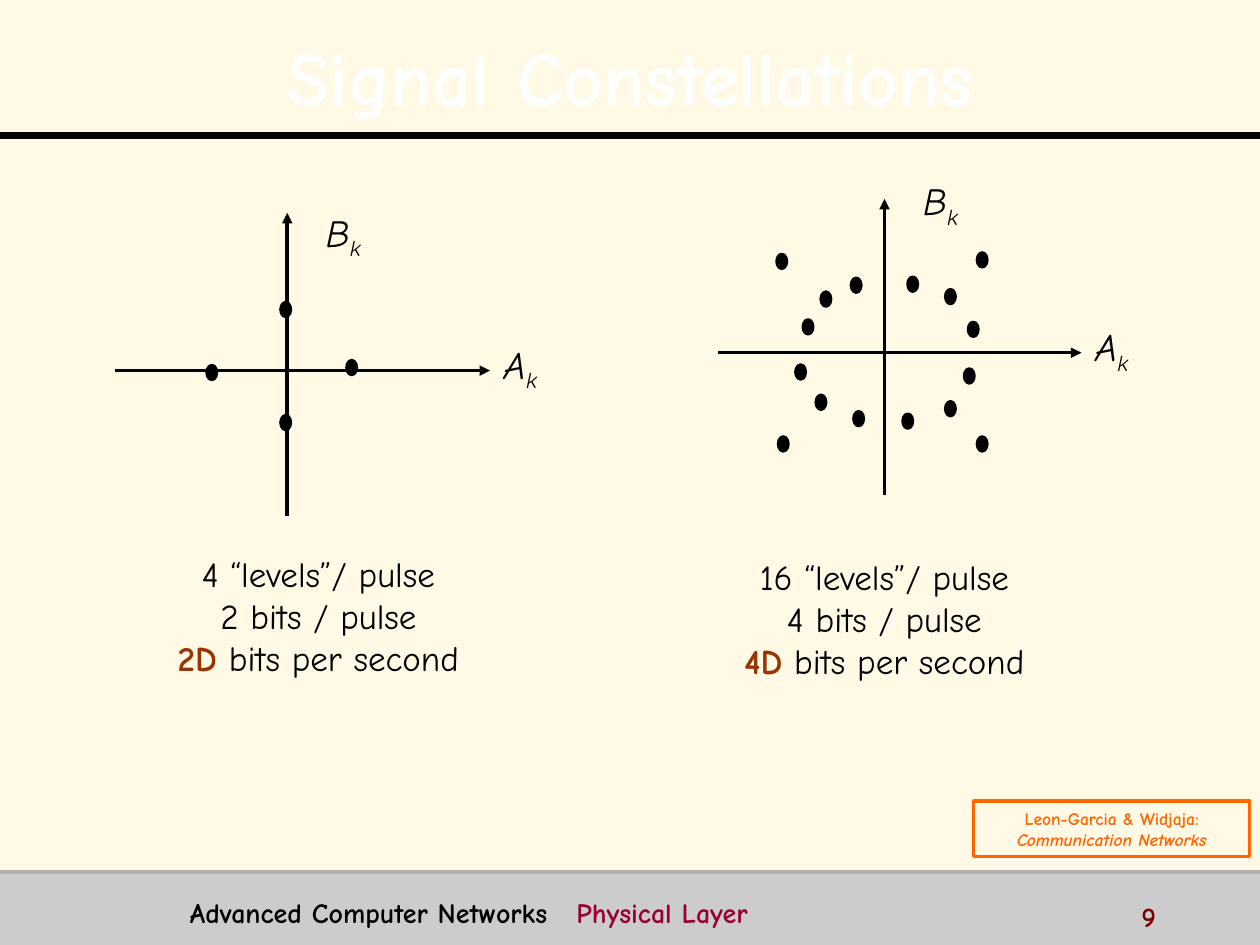
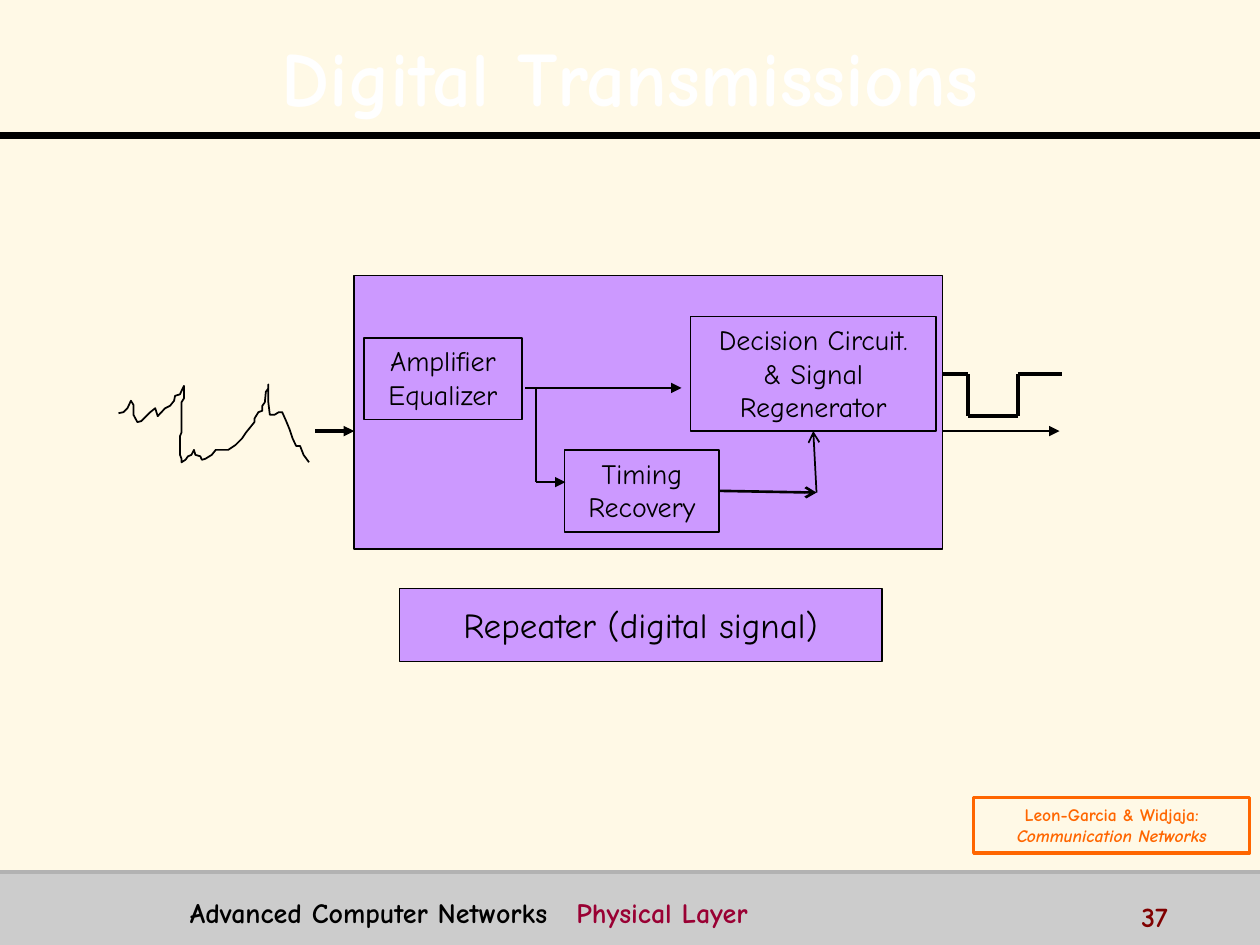
from dataclasses import dataclass
from itertools import pairwise

from lxml.etree import SubElement
from pptx import Presentation
from pptx.dml.color import RGBColor
from pptx.enum.shapes import MSO_CONNECTOR, MSO_SHAPE
from pptx.enum.text import MSO_ANCHOR, MSO_AUTO_SIZE, PP_ALIGN
from pptx.oxml import parse_xml
from pptx.oxml.ns import nsdecls, qn
from pptx.util import Cm, Pt


@dataclass(frozen=True)
class Theme:
    """Colours, font and type sizes shared by the slides."""
    font: str = "Comic Neue"
    paper: str = "FFF9E6"
    ink: str = "000000"
    white: str = "FFFFFF"
    band: str = "CCCCCC"
    band_edge: str = "B2B2B2"
    chapter: str = "990033"
    number: str = "800000"
    accent: str = "993300"
    citation: str = "FF6600"
    block: str = "CC99FF"
    title_size: int = 44
    axis_size: int = 22
    body_size: int = 20
    label_size: int = 16
    citation_size: int = 10


THEME = Theme()
WIDTH, HEIGHT = 25.4, 19.05
BAND_TOP = 17.58
DOT_WIDTH, DOT_HEIGHT = 0.19, 0.28

FOUR_LEVELS = [(-0.03, -1.23), (1.3, -0.06), (-1.52, 0.04), (-0.03, 1.05)]
SIXTEEN_LEVELS = [
    (-2.07, -1.84), (-0.57, -1.36), (-1.54, -0.52), (-1.18, -1.08),
    (0.57, -1.38), (1.97, -1.87), (1.33, -1.13), (1.79, -0.47),
    (-1.69, 0.39), (-1.28, 1), (-2.04, 1.84), (-0.52, 1.33),
    (1.33, 1.13), (1.71, 0.47), (0.47, 1.38), (1.97, 1.84),
]
NOISY_SIGNAL = [
    (0, 58), (10, 56), (18, 48), (25, 33), (30, 41), (30, 61), (38, 76), (46, 74),
    (64, 56), (74, 48), (79, 64), (94, 48), (104, 43), (112, 33), (114, 23), (124, 20),
    (127, 13), (132, 3), (132, 28), (127, 36), (127, 97), (124, 104), (124, 142),
    (127, 150), (127, 157), (135, 152), (140, 145), (147, 142), (152, 132), (155, 142),
    (165, 145), (168, 152), (175, 150), (188, 142), (196, 132), (221, 132), (236, 122),
    (249, 109), (257, 97), (274, 76), (274, 69), (282, 56), (290, 53), (290, 43),
    (295, 36), (297, 15), (302, 8), (302, 0), (302, 36), (305, 61), (315, 61),
    (323, 56), (330, 56), (338, 74), (345, 91), (351, 109), (358, 124), (366, 124),
    (373, 142), (384, 157),
]


def add_span(para, text, size, color=THEME.ink, bold=False, italic=False,
             subscript=False, shadow=False):
    """Append one formatted run to a paragraph."""
    span = para.add_run()
    span.text = text
    font = span.font
    font.name, font.size, font.bold, font.italic = THEME.font, Pt(size), bold, italic
    font.color.rgb = RGBColor.from_string(color)
    properties = span._r.get_or_add_rPr()
    if subscript:
        properties.set("baseline", "-25000")
    if shadow:
        properties.find(qn("a:solidFill")).addnext(parse_xml(
            f'<a:effectLst {nsdecls("a")}><a:outerShdw dist="35921" dir="2700000">'
            f'<a:srgbClr val="{THEME.ink}"/></a:outerShdw></a:effectLst>'))


def write(box, lines, align=PP_ALIGN.CENTER, anchor=MSO_ANCHOR.TOP, wrap=True,
          inset=None, spacing=None, tab=None, **style):
    """Fill a shape with lines, each a list of (text, style changes) spans."""
    frame = box.text_frame
    frame.word_wrap = wrap
    frame.vertical_anchor = anchor
    if inset:
        frame.margin_left = frame.margin_right = Cm(inset[0])
        frame.margin_top = frame.margin_bottom = Cm(inset[1])
    for index, spans in enumerate(lines):
        para = frame.add_paragraph() if index else frame.paragraphs[0]
        para.alignment = align
        if spacing:
            para.line_spacing = spacing
        if tab:
            stops = SubElement(para._p.get_or_add_pPr(), qn("a:tabLst"))
            SubElement(stops, qn("a:tab"), pos=str(Cm(tab)), algn="l")
        for text, changes in spans:
            add_span(para, text, **{**style, **changes})


def add_text(page, left, top, width, height, lines, grow=False, **style):
    """Add a text box, optionally fitted to its text."""
    box = page.shapes.add_textbox(Cm(left), Cm(top), Cm(width), Cm(height))
    write(box, lines, **style)
    if grow:
        box.text_frame.auto_size = MSO_AUTO_SIZE.SHAPE_TO_FIT_TEXT
    return box


def paint(shape, fill=None, line=None, weight=1):
    """Set fill and outline of a shape and remove its shadow."""
    shape.shadow.inherit = False
    if fill:
        shape.fill.solid()
        shape.fill.fore_color.rgb = RGBColor.from_string(fill)
    else:
        shape.fill.background()
    if line:
        shape.line.color.rgb = RGBColor.from_string(line)
        shape.line.width = Pt(weight)
    else:
        shape.line.fill.background()


def add_box(page, left, top, width, height, kind=MSO_SHAPE.RECTANGLE, **look):
    """Add a painted preset shape."""
    shape = page.shapes.add_shape(kind, Cm(left), Cm(top), Cm(width), Cm(height))
    paint(shape, **look)
    return shape


def add_line(page, start, end, weight=1, color=THEME.ink, head=None):
    """Add a straight connector, with an arrowhead at its end if asked."""
    line = page.shapes.add_connector(
        MSO_CONNECTOR.STRAIGHT, *(Cm(value) for value in (*start, *end)))
    line.line.color.rgb = RGBColor.from_string(color)
    line.line.width = Pt(weight)
    if head:
        SubElement(line.line._get_or_add_ln(), qn("a:tailEnd"), type=head)
    SubElement(line._element.spPr, qn("a:effectLst"))
    return line


def add_page(deck, title, number):
    """Add a slide with background, title, rule and footer band."""
    page = deck.slides.add_slide(deck.slide_layouts[6])
    page.background.fill.solid()
    page.background.fill.fore_color.rgb = RGBColor.from_string(THEME.paper)
    add_box(page, 0, BAND_TOP, WIDTH, HEIGHT - BAND_TOP, fill=THEME.band)
    add_line(page, (0, 2.74), (WIDTH, 2.74), weight=4)
    add_line(page, (0, BAND_TOP), (WIDTH, BAND_TOP), weight=2, color=THEME.band_edge)
    add_text(page, 0.51, 0.33, 24.4, 2.21, [[(title, {})]], anchor=MSO_ANCHOR.MIDDLE,
             spacing=1.1, size=THEME.title_size, color=THEME.white, bold=True, shadow=True)
    footer = [("Advanced Computer Networks\t", {}),
              ("Physical Layer", {"color": THEME.chapter})]
    add_text(page, 3.58, 17.93, 18.49, 0.79, [footer], align=PP_ALIGN.LEFT, tab=7.79,
             size=THEME.label_size, bold=True)
    add_text(page, 22.76, 18.01, 2.54, 0.64, [[(number, {})]], align=PP_ALIGN.LEFT,
             size=THEME.label_size, color=THEME.number, bold=True)
    return page


def add_citation(page, top):
    """Add the framed book reference above the footer."""
    box = add_box(page, 19.63, top, 5.56, 1.12, line=THEME.citation, weight=2)
    write(box, [[("Leon-Garcia & Widjaja:", {})],
                [("Communication Networks", {"italic": True})]],
          anchor=MSO_ANCHOR.MIDDLE, size=THEME.citation_size,
          color=THEME.citation, bold=True)


def add_axis_label(page, left, top, letter):
    """Add an axis name with subscript k."""
    add_text(page, left, top, 1.5, 1.32, [[(letter, {}), ("k", {"subscript": True})]],
             grow=True, wrap=False, inset=(0.38, 0.2), size=THEME.axis_size, italic=True)


def add_constellation(page, left, top, width, height, origin, dots, lift,
                      caption_at, levels, bits):
    """Draw axes, signal points and caption relative to the plot's box."""
    center, middle = left + origin[0], top + origin[1]
    add_line(page, (center, top + height), (center, top), weight=2, head="triangle")
    add_line(page, (left, middle), (left + width, middle), weight=2, head="triangle")
    for across, down in dots:
        add_box(page, center + across - DOT_WIDTH / 2, middle + down - DOT_HEIGHT / 2,
                DOT_WIDTH, DOT_HEIGHT, kind=MSO_SHAPE.OVAL,
                fill=THEME.ink, line=THEME.ink, weight=2)
    add_axis_label(page, left + width - 0.14, middle - 0.8, "A")
    add_axis_label(page, center + 0.38, top - lift, "B")
    caption = [[(f"{levels} “levels”/ pulse", {})],
               [(f"{bits} bits / pulse", {})],
               [(f"{bits}D", {"color": THEME.accent, "bold": True}),
                (" bits per second", {})]]
    add_text(page, left + caption_at[0], top + caption_at[1], 6.9, 2.82, caption,
             grow=True, wrap=False, size=THEME.body_size)


def add_noisy_signal(page, left, top):
    """Draw the distorted incoming waveform."""
    builder = page.shapes.build_freeform(*NOISY_SIGNAL[0], scale=Cm(0.01))
    builder.add_line_segments(NOISY_SIGNAL[1:], close=False)
    paint(builder.convert_to_shape(Cm(left), Cm(top)), line=THEME.ink)


def add_repeater(page, left, top, width, height):
    """Draw the repeater block, its stages, signals and caption."""
    def at(across, down):
        """Give the slide position of a point in the block."""
        return left + across, top + down

    def add_stage(across, down, stage_width, stage_height, *names):
        """Add one outlined stage with a name on each line."""
        stage = add_box(page, *at(across, down), stage_width, stage_height, line=THEME.ink)
        write(stage, [[(name, {})] for name in names], size=THEME.label_size)
        return stage

    add_line(page, at(-0.79, 3.13), at(0, 3.13), weight=2, head="triangle")
    add_line(page, at(11.5, 3.13), at(14.22, 3.13), head="triangle")
    pulse = [(11.5, 1.98), (12.37, 1.98), (12.37, 2.82),
             (13.38, 2.82), (13.38, 1.98), (14.27, 1.98)]
    for start, end in pairwise(pulse):
        add_line(page, at(*start), at(*end), weight=2.25)

    add_box(page, left, top, width, height, fill=THEME.block, line=THEME.ink, weight=0.75)
    add_stage(0.2, 1.25, 3.18, 1.65, "Amplifier", "Equalizer")
    timing = add_stage(4.24, 3.51, 3.12, 1.65, "Timing", "Recovery")
    decision = add_stage(6.78, 0.82, 4.95, 2.31,
                         "Decision Circuit.", "& Signal", "Regenerator")
    add_line(page, at(3.45, 2.26), at(6.6, 2.26), head="triangle")
    add_line(page, at(3.66, 2.26), at(3.66, 4.16))
    add_line(page, at(3.66, 4.16), at(4.26, 4.16), head="triangle")
    corner = at(9.32, 4.37)
    clock = add_line(page, at(7.36, 4.34), corner, weight=1.5, head="arrow")
    clock.begin_connect(timing, 3)
    trigger = add_line(page, corner, at(9.26, 3.13), head="arrow")
    trigger.end_connect(decision, 2)

    caption = add_box(page, *at(0.91, 6.3), 9.73, 1.47,
                      fill=THEME.block, line=THEME.ink, weight=0.75)
    write(caption, [[("Repeater (digital signal)", {})]], anchor=MSO_ANCHOR.MIDDLE,
          wrap=False, size=THEME.body_size)


def build_constellations(deck):
    """Build the slide comparing two constellations."""
    page = add_page(deck, "Signal Constellations", "9")
    add_constellation(page, 2.31, 4.29, 7.57, 6.12, origin=(3.48, 3.18),
                      dots=FOUR_LEVELS, lift=0.28, caption_at=(0.66, 6.73),
                      levels=4, bits=2)
    add_constellation(page, 14.48, 4.01, 7.32, 5.97, origin=(3.35, 3.1),
                      dots=SIXTEEN_LEVELS, lift=0.64, caption_at=(-0.1, 7.06),
                      levels=16, bits=4)
    add_citation(page, 16.15)


def build_transmissions(deck):
    """Build the slide on the digital repeater."""
    page = add_page(deck, "Digital Transmissions", "37")
    add_noisy_signal(page, 2.39, 7.75)
    add_repeater(page, 7.14, 5.56, 11.86, 5.51)
    add_citation(page, 16.08)


def main():
    """Build and save the deck."""
    deck = Presentation()
    deck.slide_width, deck.slide_height = Cm(WIDTH), Cm(HEIGHT)
    build_constellations(deck)
    build_transmissions(deck)
    deck.save("out.pptx")


if __name__ == "__main__":
    main()
